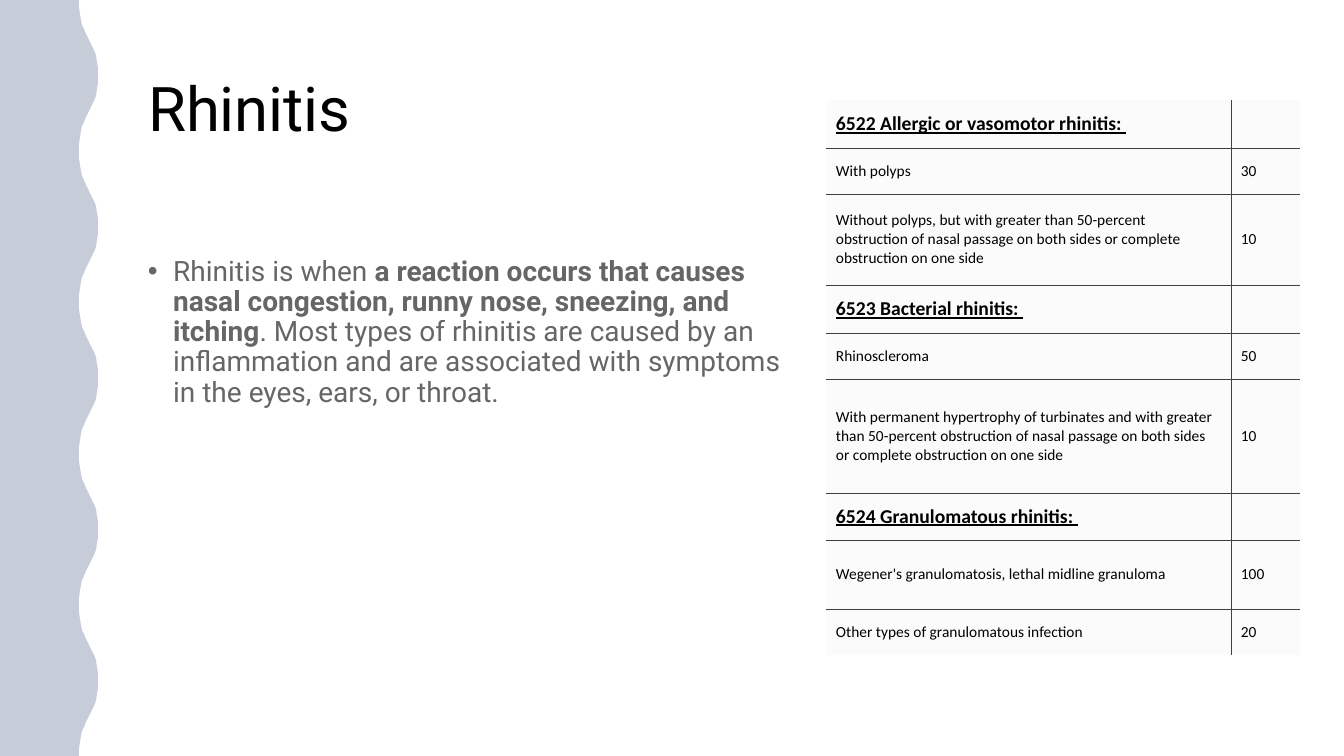
from lxml import etree
from pptx import Presentation
from pptx import util as u
from pptx.dml.color import RGBColor
from pptx.enum import text
from pptx.oxml import ns

PX = 914400 / 100.8
SLIDE_WIDTH, SLIDE_HEIGHT = 1344, 756

BLACK = RGBColor(0x00, 0x00, 0x00)
WHITE = RGBColor(0xFF, 0xFF, 0xFF)
NAVY = RGBColor(0x20, 0x38, 0x64)
PALE_GREY = RGBColor(0xF2, 0xF2, 0xF2)
RULE_GREY = RGBColor(0x40, 0x40, 0x40)

SWELL = [(79, 0), (79, 7), (80, 14), (81, 20), (82, 25), (84, 29), (86, 34), (88, 38),
         (90, 42), (92, 46), (94, 50), (96, 55), (97, 62), (98, 68), (98, 76)]
SWELL_COUNT = 10

DEFINITION = [
    ("Rhinitis is when ", False),
    ("a reaction occurs that causes nasal congestion, runny nose, sneezing, and itching", True),
    (". Most types of rhinitis are caused by an inflammation and are associated with "
     "symptoms in the eyes, ears, or throat.", False),
]

RATING_COLUMNS = [405, 69]
RATINGS = [
    (48, "6522 Allergic or vasomotor rhinitis: ", ""),
    (46, "With polyps", "30"),
    (91, "Without polyps, but with greater than 50-percent obstruction of nasal passage "
         "on both sides or complete obstruction on one side", "10"),
    (48, "6523 Bacterial rhinitis: ", ""),
    (46, "Rhinoscleroma", "50"),
    (114, "With permanent hypertrophy of turbinates and with greater than 50-percent "
          "obstruction of nasal passage on both sides or complete obstruction on one side", "10"),
    (47, "6524 Granulomatous rhinitis: ", ""),
    (69, "Wegener's granulomatosis, lethal midline granuloma", "100"),
    (46, "Other types of granulomatous infection", "20"),
]


def px(length):
    """Turn a length in px into EMU."""
    return u.Emu(round(length * PX))


def set_opacity(element, percent):
    """Make every colour inside an element partly transparent."""
    for color in element.iter(ns.qn("a:srgbClr")):
        etree.SubElement(color, ns.qn("a:alpha"), val=str(percent * 1000))


def add_run(paragraph, words, font_name, size, bold=False, underline=False):
    """Append a black run to a paragraph."""
    run = paragraph.add_run()
    run.text = words
    run.font.name = font_name
    run.font.size = u.Pt(size)
    run.font.bold = bold
    run.font.underline = underline
    run.font.color.rgb = BLACK
    return run


def place_title(slide, left, top, width, height):
    """Place and format the title placeholder."""
    title = slide.shapes.title
    title.left, title.top, title.width, title.height = map(px, (left, top, width, height))
    frame = title.text_frame
    frame.auto_size = text.MSO_AUTO_SIZE.NONE
    frame.vertical_anchor = text.MSO_ANCHOR.TOP
    paragraph = frame.paragraphs[0]
    paragraph.alignment = text.PP_ALIGN.LEFT
    paragraph.line_spacing = 0.9
    add_run(paragraph, "Rhinitis", "Roboto", 44)


def add_wavy_band(slide, left, top, height):
    """Draw the wavy band: a white base under a translucent navy layer."""
    swell_height = height / SWELL_COUNT
    edge = []
    for index in range(SWELL_COUNT):
        start = top + index * swell_height
        if index % 2 == 0:
            edge += [(left + x, start + y) for x, y in SWELL]
        else:
            edge += [(left + x, start + swell_height - y) for x, y in reversed(SWELL)]
    edge = [(x, min(max(y, top), top + height)) for x, y in edge]
    group = slide.shapes.add_group_shape()
    for color, opacity in ((WHITE, 100), (NAVY, 25)):
        builder = group.shapes.build_freeform(left, top, scale=PX)
        builder.add_line_segments(edge + [(left, top + height)], close=True)
        band = builder.convert_to_shape()
        band.shadow.inherit = False
        band.line.fill.background()
        band.fill.solid()
        band.fill.fore_color.rgb = color
        if opacity < 100:
            set_opacity(band.element.spPr, opacity)


def add_definition(slide, left, top, width, height):
    """Add the bulleted definition."""
    box = slide.shapes.add_textbox(*map(px, (left, top, width, height)))
    frame = box.text_frame
    frame.word_wrap = True
    paragraph = frame.paragraphs[0]
    paragraph.line_spacing = 0.9
    paragraph.space_before = u.Pt(10)
    properties = paragraph._p.get_or_add_pPr()
    properties.set("marL", str(u.Inches(0.25)))
    properties.set("indent", str(-u.Inches(0.25)))
    etree.SubElement(properties, ns.qn("a:buFont"), typeface="Arial")
    etree.SubElement(properties, ns.qn("a:buChar"), char="•")
    for words, bold in DEFINITION:
        add_run(paragraph, words, "Roboto", 20, bold)
    set_opacity(paragraph._p, 60)


def set_borders(cell, ruled_sides):
    """Rule the named sides of a cell and clear the others."""
    properties = cell._tc.get_or_add_tcPr()
    for index, side in enumerate("LRTB"):
        line = etree.Element(ns.qn(f"a:ln{side}"), w=str(u.Pt(0.5)))
        if side in ruled_sides:
            fill = etree.SubElement(line, ns.qn("a:solidFill"))
            etree.SubElement(fill, ns.qn("a:srgbClr"), val=str(RULE_GREY))
        else:
            etree.SubElement(line, ns.qn("a:noFill"))
        properties.insert(index, line)


def add_ratings_table(slide, left, top):
    """Add the table of ratings, ruled on its inner edges only."""
    heights = [height for height, *_ in RATINGS]
    frame = slide.shapes.add_table(len(RATINGS), len(RATING_COLUMNS), px(left), px(top),
                                   px(sum(RATING_COLUMNS)), px(sum(heights)))
    table = frame.table
    table.first_row = table.horz_banding = False
    for column, width in zip(table.columns, RATING_COLUMNS):
        column.width = px(width)
    for row_index, (height, *entries) in enumerate(RATINGS):
        table.rows[row_index].height = px(height)
        is_heading = not entries[-1]
        for column_index, words in enumerate(entries):
            cell = table.cell(row_index, column_index)
            cell.vertical_anchor = text.MSO_ANCHOR.MIDDLE
            cell.margin_left, cell.margin_right = px(10), px(11)
            cell.margin_top = cell.margin_bottom = px(8)
            cell.fill.solid()
            cell.fill.fore_color.rgb = PALE_GREY
            set_opacity(cell._tc, 30)
            sides = "R" if column_index == 0 else "L"
            sides += "T" if row_index > 0 else ""
            sides += "B" if row_index < len(RATINGS) - 1 else ""
            set_borders(cell, sides)
            if words:
                add_run(cell.text_frame.paragraphs[0], words, "Calibri",
                        14 if is_heading else 11, is_heading, is_heading)


def main():
    """Build the slide and save it."""
    presentation = Presentation()
    presentation.slide_width, presentation.slide_height = px(SLIDE_WIDTH), px(SLIDE_HEIGHT)
    slide = presentation.slides.add_slide(presentation.slide_layouts[5])
    place_title(slide, 138, 73, 661, 164)
    add_wavy_band(slide, 0, 0, SLIDE_HEIGHT)
    add_definition(slide, 138, 252, 663, 423)
    add_ratings_table(slide, 826, 100)
    presentation.save("out.pptx")


if __name__ == "__main__":
    main()
